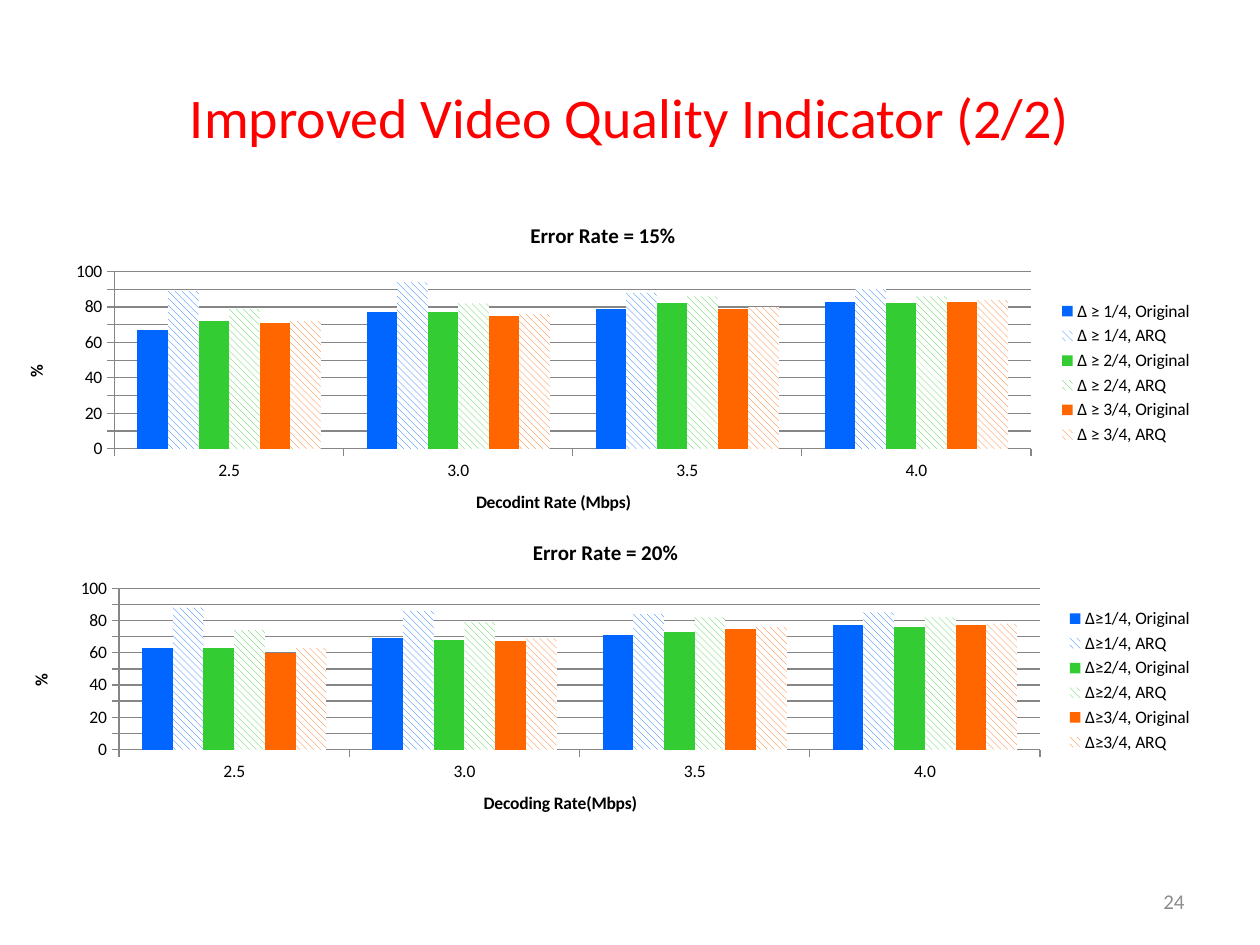
from lxml import etree
from pptx import Presentation
from pptx.chart.data import CategoryChartData
from pptx.dml.color import RGBColor
from pptx.enum.chart import XL_CHART_TYPE as ChartType, XL_LEGEND_POSITION as LegendPosition, XL_TICK_MARK as TickMark
from pptx.enum.dml import MSO_PATTERN as Pattern
from pptx.enum.text import MSO_ANCHOR as Anchor, PP_ALIGN as Align
from pptx.oxml.ns import qn
from pptx.util import Inches, Pt

FONT = "Calibri"
RATES = ["2.5", "3.0", "3.5", "4.0"]
SERIES_COLORS = ["0066FF", "33CC33", "FF6600"]
LINE_COLOR = "868686"

CHARTS = [
    {
        "box": (0, 1.62, 9.57, 2.68),
        "plot": (0.095, 0.2, 0.76, 0.525),
        "title": "Error Rate = 15%",
        "axis": "Decodint Rate (Mbps)",
        "sign": "∆ ≥ ",
        "values": [
            [67, 77, 79, 83], [89, 94, 88, 90],
            [72, 77, 82, 82], [79, 82, 86, 86],
            [71, 75, 79, 83], [72, 76, 80, 84],
        ],
    },
    {
        "box": (0.04, 4.14, 9.53, 2.52),
        "plot": (0.095, 0.21, 0.767, 0.508),
        "title": "Error Rate = 20%",
        "axis": "Decoding Rate(Mbps)",
        "sign": "∆≥",
        "values": [
            [63, 69, 71, 77], [88, 86, 84, 85],
            [63, 68, 73, 76], [74, 79, 82, 82],
            [60, 67, 75, 77], [63, 69, 76, 78],
        ],
    },
]


def rgb(color):
    return RGBColor.from_string(color)


def style_font(font, size, color="000000", bold=False):
    font.name = FONT
    font.size = Pt(size)
    font.bold = bold
    font.color.rgb = rgb(color)


def add_text(slide, box, text, size, color, align):
    shape = slide.shapes.add_textbox(*map(Inches, box))
    frame = shape.text_frame
    frame.word_wrap = True
    frame.vertical_anchor = Anchor.MIDDLE
    paragraph = frame.paragraphs[0]
    paragraph.alignment = align
    run = paragraph.add_run()
    run.text = text
    style_font(run.font, size, color)


def set_title(holder, text, size):
    paragraph = holder.text_frame.paragraphs[0]
    run = paragraph.add_run()
    run.text = text
    style_font(run.font, size, bold=True)


def style_axis(axis, title):
    set_title(axis.axis_title, title, 10)
    axis.major_tick_mark = TickMark.OUTSIDE
    axis.minor_tick_mark = TickMark.NONE
    axis.format.line.color.rgb = rgb(LINE_COLOR)
    style_font(axis.tick_labels.font, 10)


def place_plot(chart, plot):
    area = chart._chartSpace.chart.plotArea
    for layout in area.findall(qn("c:layout")):
        area.remove(layout)
    layout = etree.Element(qn("c:layout"))
    manual = etree.SubElement(layout, qn("c:manualLayout"))
    settings = [("layoutTarget", "inner"), ("xMode", "edge"), ("yMode", "edge")]
    settings += zip("xywh", plot)
    for name, value in settings:
        etree.SubElement(manual, qn(f"c:{name}")).set("val", str(value))
    area.insert(0, layout)


def fill_series(chart):
    for index, series in enumerate(chart.plots[0].series):
        color = rgb(SERIES_COLORS[index // 2])
        series.invert_if_negative = False
        fill = series.format.fill
        if index % 2:
            fill.patterned()
            fill.pattern = Pattern.WIDE_DOWNWARD_DIAGONAL
            fill.fore_color.rgb = color
            fill.back_color.rgb = rgb("FFFFFF")
        else:
            fill.solid()
            fill.fore_color.rgb = color


def add_quality_chart(slide, box, plot, title, axis, sign, values):
    data = CategoryChartData()
    data.categories = RATES
    for index, row in enumerate(values):
        kind = "ARQ" if index % 2 else "Original"
        data.add_series(f"{sign}{index // 2 + 1}/4, {kind}", row)
    frame = slide.shapes.add_chart(ChartType.COLUMN_CLUSTERED, *map(Inches, box), data)
    chart = frame.chart
    style_font(chart.font, 10)
    chart.has_title = True
    set_title(chart.chart_title, title, 12)
    chart.chart_title.include_in_layout = False
    chart.has_legend = True
    chart.legend.position = LegendPosition.RIGHT
    chart.legend.include_in_layout = False
    style_font(chart.legend.font, 10)
    chart.plots[0].gap_width = 150
    chart.plots[0].overlap = 0
    chart.plots[0].vary_by_categories = False
    style_axis(chart.category_axis, axis)
    style_axis(chart.value_axis, "%")
    chart.value_axis.minimum_scale = 0
    chart.value_axis.maximum_scale = 100
    chart.value_axis.major_unit = 10
    chart.value_axis.major_gridlines.format.line.color.rgb = rgb(LINE_COLOR)
    fill_series(chart)
    place_plot(chart, plot)


def main():
    presentation = Presentation()
    presentation.slide_width = Inches(10)
    presentation.slide_height = Inches(7.5)
    slide = presentation.slides.add_slide(presentation.slide_layouts[6])
    add_text(slide, (0.5, 0.3, 9, 1.25), "Improved Video Quality Indicator (2/2)", 32, "FF0000", Align.CENTER)
    add_text(slide, (7.17, 6.95, 2.33, 0.4), "24", 12, "8C8C8C", Align.RIGHT)
    for chart in CHARTS:
        add_quality_chart(slide, **chart)
    presentation.save("out.pptx")


if __name__ == "__main__":
    main()
